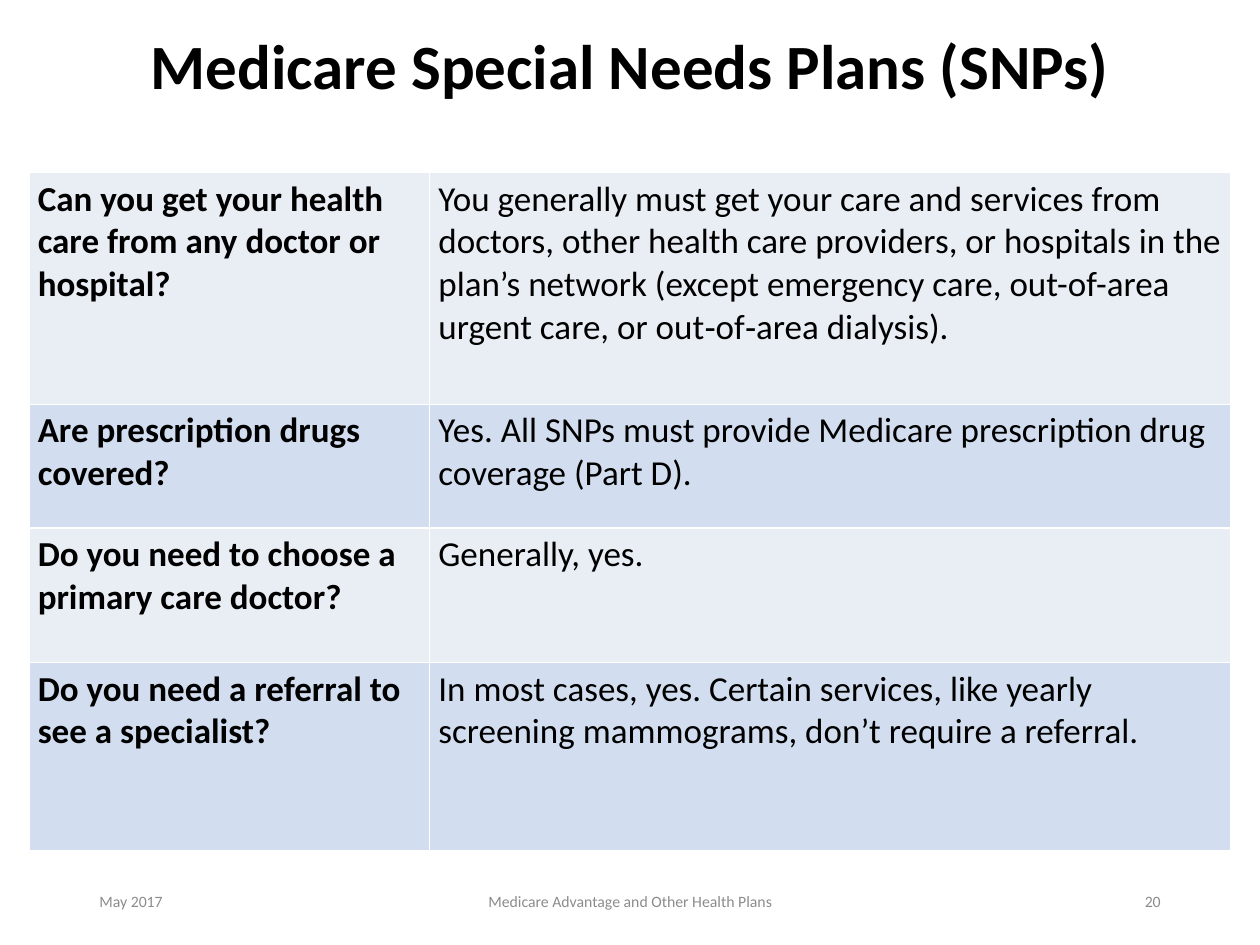
from dataclasses import dataclass

from lxml import etree
from pptx import Presentation
from pptx.dml.color import RGBColor
from pptx.enum import text
from pptx.oxml import ns
from pptx.util import Inches, Pt

WIDE, HIGH = 10, 7.5
ALIGN = text.PP_ALIGN
TOP, MID = text.MSO_ANCHOR.TOP, text.MSO_ANCHOR.MIDDLE


@dataclass(frozen=True)
class Theme:
    font: str = "Calibri"
    ink: str = "000000"
    muted: str = "8C8C8C"
    rule: str = "FFFFFF"
    bands: tuple = ("E9EDF4", "D2DEEF")
    title: int = 36
    body: int = 20
    foot: int = 9


THEME = Theme()

ROWS = (
    (1.84, "Can you get your health care from any doctor or hospital?",
     "You generally must get your care and services from doctors, other health care "
     "providers, or hospitals in the plan’s network (except emergency care, "
     "out-of-area urgent care, or out‑of‑area dialysis)."),
    (0.98, "Are prescription drugs covered?",
     "Yes. All SNPs must provide Medicare prescription drug coverage (Part D)."),
    (1.07, "Do you need to choose a primary care doctor?",
     "Generally, yes."),
    (1.49, "Do you need a referral to see a specialist?",
     "In most cases, yes. Certain services, like yearly screening mammograms, "
     "don’t require a referral."),
)


def scale(box):
    x, y, w, h = box
    return Inches(x * WIDE), Inches(y * HIGH), Inches(w * WIDE), Inches(h * HIGH)


def write(frame, words, size=THEME.body, color=THEME.ink, bold=False,
          align=ALIGN.LEFT, anchor=TOP, lead=None):
    frame.word_wrap = True
    frame.vertical_anchor = anchor
    para = frame.paragraphs[0]
    para.alignment = align
    para.line_spacing = lead
    run = para.add_run()
    run.text = words
    font = run.font
    font.name, font.size, font.bold = THEME.font, Pt(size), bold
    font.color.rgb = RGBColor.from_string(color)


def label(slide, box, words, **style):
    write(slide.shapes.add_textbox(*scale(box)).text_frame, words, anchor=MID, **style)


def edge(cell):
    props = cell._tc.get_or_add_tcPr()
    for side in "LRTB":
        line = etree.SubElement(props, ns.qn(f"a:ln{side}"), w=str(Pt(1)))
        fill = etree.SubElement(line, ns.qn("a:solidFill"))
        etree.SubElement(fill, ns.qn("a:srgbClr"), val=THEME.rule)


def grid(slide, box):
    left, top, width, height = scale(box)
    table = slide.shapes.add_table(len(ROWS), 2, left, top, width, height).table
    table.first_row = table.horz_banding = False
    for col, share in zip(table.columns, (1, 2)):
        col.width = int(width * share / 3)
    total = sum(row[0] for row in ROWS)
    for i, (share, *pair) in enumerate(ROWS):
        table.rows[i].height = int(height * share / total)
        for j, words in enumerate(pair):
            cell = table.cell(i, j)
            cell.margin_left = cell.margin_right = Inches(0.07)
            cell.margin_top = cell.margin_bottom = Inches(0.04)
            edge(cell)
            cell.fill.solid()
            cell.fill.fore_color.rgb = RGBColor.from_string(THEME.bands[i % 2])
            write(cell.text_frame, words, bold=j == 0)
            cell.vertical_anchor = TOP


def footer(slide, box):
    x, y, w, h = box
    parts = (
        (0, 0.26, "May 2017", ALIGN.LEFT),
        (0.305, 0.39, "Medicare Advantage and Other Health Plans", ALIGN.CENTER),
        (0.74, 0.26, "20", ALIGN.RIGHT),
    )
    for start, share, words, align in parts:
        label(slide, (x + start * w, y, share * w, h), words,
              size=THEME.foot, color=THEME.muted, align=align)


def main():
    deck = Presentation()
    deck.slide_width, deck.slide_height = Inches(WIDE), Inches(HIGH)
    slide = deck.slides.add_slide(deck.slide_layouts[6])
    label(slide, (0, 0, 1, 0.146), "Medicare Special Needs Plans (SNPs)",
          size=THEME.title, bold=True, align=ALIGN.CENTER, lead=0.9)
    grid(slide, (0.023, 1.37 / HIGH, 0.954, 5.38 / HIGH))
    footer(slide, (0.069, 6.95 / HIGH, 0.862, 0.4 / HIGH))
    deck.save("out.pptx")


if __name__ == "__main__":
    main()
